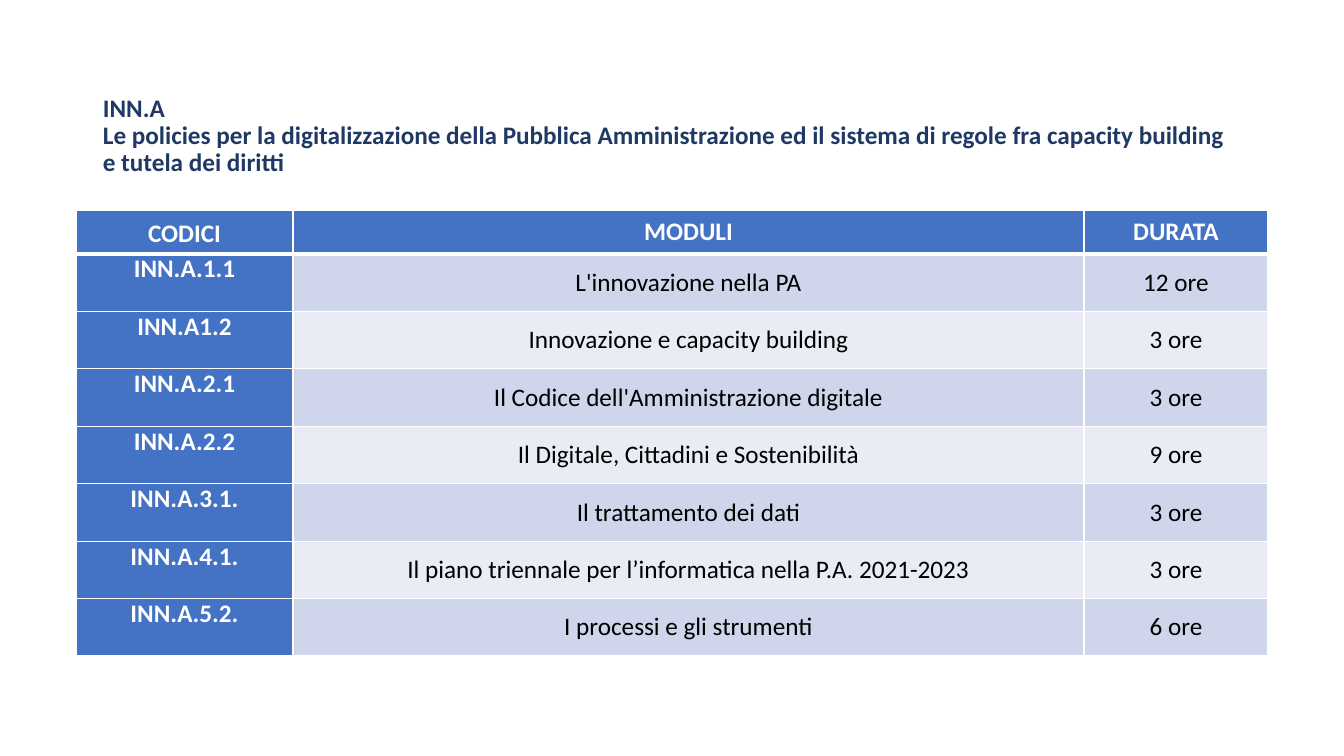
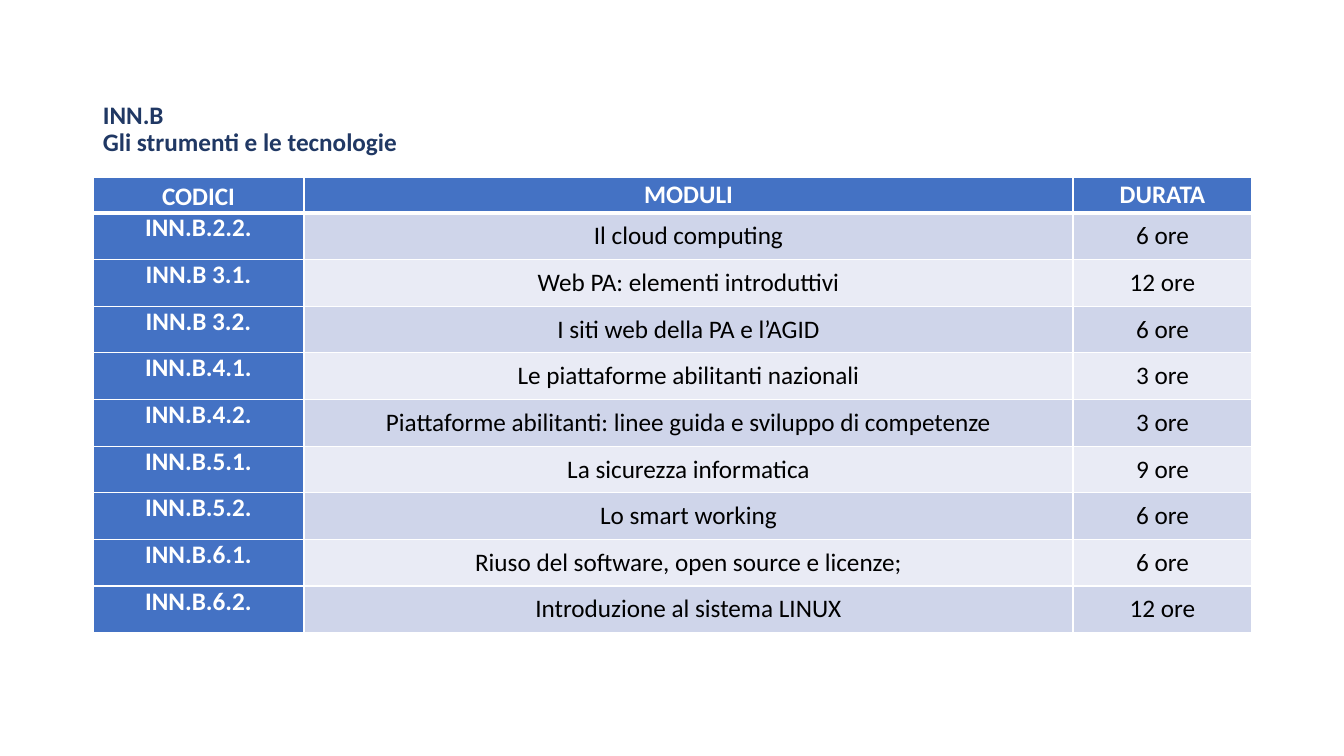
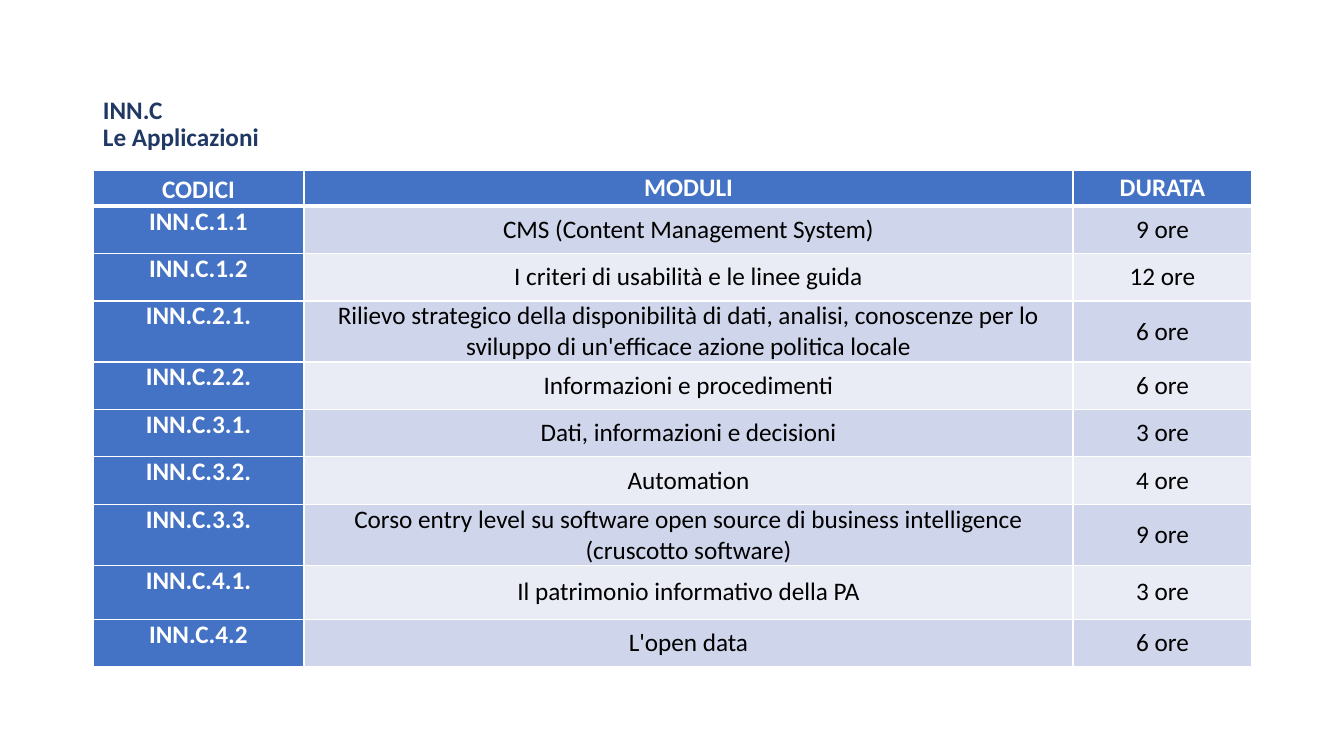
import dataclasses

import lxml.etree
import pptx
import pptx.dml.color
import pptx.enum.text
import pptx.oxml.ns
import pptx.util

ALIGN = pptx.enum.text.PP_ALIGN
ANCHOR = pptx.enum.text.MSO_ANCHOR


@dataclasses.dataclass(frozen=True)
class Theme:
    font: str = "Calibri"
    size: int = 18
    title: str = "203864"
    header: str = "4472C4"
    on_header: str = "FFFFFF"
    body: str = "000000"
    bands: tuple = ("CFD5EA", "E9EBF5")
    border: str = "FFFFFF"
    thin: int = 1
    thick: int = 3


THEME = Theme()
EMU_PER_PX = 914400 / 100.8
SLIDE_SIZE = (1344, 756)
COLUMN_SHARES = (217, 791, 184)
HEADINGS = ("CODICI", "MODULI", "DURATA")

# Each course: title, title box, top inset, table box, header height,
# heights of the taller rows by row number, modules
COURSES = (
    dict(
        title="INN.A\vLe policies per la digitalizzazione della Pubblica Amministrazione "
              "ed il sistema di regole fra capacity building e tutela dei diritti",
        title_box=(93, 50, 1159, 146), title_inset=32,
        table_box=(76, 210, 1192, 446), header_height=44, tall_rows={},
        modules=(
            ("INN.A.1.1", "L'innovazione nella PA", "12 ore"),
            ("INN.A1.2", "Innovazione e capacity building", "3 ore"),
            ("INN.A.2.1", "Il Codice dell'Amministrazione digitale", "3 ore"),
            ("INN.A.2.2", "Il Digitale, Cittadini e Sostenibilità", "9 ore"),
            ("INN.A.3.1.", "Il trattamento dei dati", "3 ore"),
            ("INN.A.4.1.", "Il piano triennale per l’informatica nella P.A. 2021-2023", "3 ore"),
            ("INN.A.5.2.", "I processi e gli strumenti", "6 ore"),
        ),
    ),
    dict(
        title="INN.B\vGli strumenti e le tecnologie",
        title_box=(93, 57, 1159, 146), title_inset=5,
        table_box=(93, 177, 1159, 456), header_height=36, tall_rows={},
        modules=(
            ("INN.B.2.2.", "Il cloud computing", "6 ore"),
            ("INN.B 3.1.", "Web PA: elementi introduttivi", "12 ore"),
            ("INN.B 3.2.", "I siti web della PA e l’AGID", "6 ore"),
            ("INN.B.4.1.", "Le piattaforme abilitanti nazionali", "3 ore"),
            ("INN.B.4.2.", "Piattaforme abilitanti: linee guida e sviluppo di competenze", "3 ore"),
            ("INN.B.5.1.", "La sicurezza informatica", "9 ore"),
            ("INN.B.5.2.", "Lo smart working", "6 ore"),
            ("INN.B.6.1.", "Riuso del software, open source e licenze;", "6 ore"),
            ("INN.B.6.2.", "Introduzione al sistema LINUX", "12 ore"),
        ),
    ),
    dict(
        title="INN.C\vLe Applicazioni",
        title_box=(93, 52, 1159, 146), title_inset=5,
        table_box=(93, 170, 1159, 497), header_height=36, tall_rows={3: 61, 7: 61, 8: 54},
        modules=(
            ("INN.C.1.1", "CMS (Content Management System)", "9 ore"),
            ("INN.C.1.2", "I criteri di usabilità e le linee guida", "12 ore"),
            ("INN.C.2.1.", "Rilievo strategico della disponibilità di dati, analisi, conoscenze "
                           "per lo sviluppo di un'efficace azione politica locale", "6 ore"),
            ("INN.C.2.2.", "Informazioni e procedimenti", "6 ore"),
            ("INN.C.3.1.", "Dati, informazioni e decisioni", "3 ore"),
            ("INN.C.3.2.", "Automation", "4 ore"),
            ("INN.C.3.3.", "Corso entry level su software open source di business intelligence "
                           "(cruscotto software)", "9 ore"),
            ("INN.C.4.1.", "Il patrimonio informativo della PA", "3 ore"),
            ("INN.C.4.2", "L'open data", "6 ore"),
        ),
    ),
)


def px(length):
    return pptx.util.Emu(round(length * EMU_PER_PX))


def rgb(value):
    return pptx.dml.color.RGBColor.from_string(value)


def write(frame, text, color, bold=False, align=ALIGN.LEFT, spacing=1.0):
    frame.word_wrap = True
    paragraph = frame.paragraphs[0]
    paragraph.text = text
    paragraph.alignment = align
    paragraph.line_spacing = spacing
    for run in paragraph.runs:
        run.font.name = THEME.font
        run.font.size = pptx.util.Pt(THEME.size)
        run.font.bold = bold
        run.font.color.rgb = rgb(color)


def set_borders(cell, top, bottom):
    """Outline a cell; the lines must come before its fill."""
    properties = cell._tc.get_or_add_tcPr()
    qn = pptx.oxml.ns.qn
    widths = {"lnL": THEME.thin, "lnR": THEME.thin, "lnT": top, "lnB": bottom}
    for position, (side, width) in enumerate(widths.items()):
        line = lxml.etree.Element(qn(f"a:{side}"), w=str(pptx.util.Pt(width)))
        fill = lxml.etree.SubElement(line, qn("a:solidFill"))
        lxml.etree.SubElement(fill, qn("a:srgbClr"), val=THEME.border)
        properties.insert(position, line)


def add_title(slide, text, box, top_inset):
    frame = slide.shapes.add_textbox(*map(px, box)).text_frame
    frame.vertical_anchor = ANCHOR.MIDDLE
    frame.margin_top = px(top_inset)
    write(frame, text, THEME.title, bold=True, spacing=0.9)


def fill_cell(cell, text, row, column):
    is_header, is_code = row == 0, column == 0
    strong = is_header or is_code
    cell.margin_left = cell.margin_right = px(7)
    cell.margin_top = cell.margin_bottom = 0
    cell.vertical_anchor = ANCHOR.TOP if is_code and not is_header else ANCHOR.MIDDLE
    cell.fill.solid()
    cell.fill.fore_color.rgb = rgb(THEME.header if strong else THEME.bands[(row - 1) % 2])
    set_borders(cell,
                top=THEME.thick if row == 1 else THEME.thin,
                bottom=THEME.thick if is_header else THEME.thin)
    write(cell.text_frame, text, THEME.on_header if strong else THEME.body, bold=strong,
          align=ALIGN.CENTER, spacing=1.15 if is_header and is_code else 1.0)


def add_modules_table(slide, modules, box, header_height, tall_rows):
    rows = (HEADINGS, *modules)
    table = slide.shapes.add_table(len(rows), len(HEADINGS), *map(px, box)).table
    width, height = box[2:]

    # Columns share the width; ordinary rows share the height left over
    for column, share in zip(table.columns, COLUMN_SHARES):
        column.width = px(width * share / sum(COLUMN_SHARES))
    fixed = {0: header_height, **tall_rows}
    ordinary = (height - sum(fixed.values())) / (len(rows) - len(fixed))

    for r, texts in enumerate(rows):
        table.rows[r].height = px(fixed.get(r, ordinary))
        for c, text in enumerate(texts):
            fill_cell(table.cell(r, c), text, r, c)


def add_course_slide(deck, course):
    slide = deck.slides.add_slide(deck.slide_layouts[6])
    add_title(slide, course["title"], course["title_box"], course["title_inset"])
    add_modules_table(slide, course["modules"], course["table_box"],
                      course["header_height"], course["tall_rows"])


def main():
    deck = pptx.Presentation()
    deck.slide_width, deck.slide_height = map(px, SLIDE_SIZE)
    for course in COURSES:
        add_course_slide(deck, course)
    deck.save("out.pptx")


if __name__ == "__main__":
    main()
